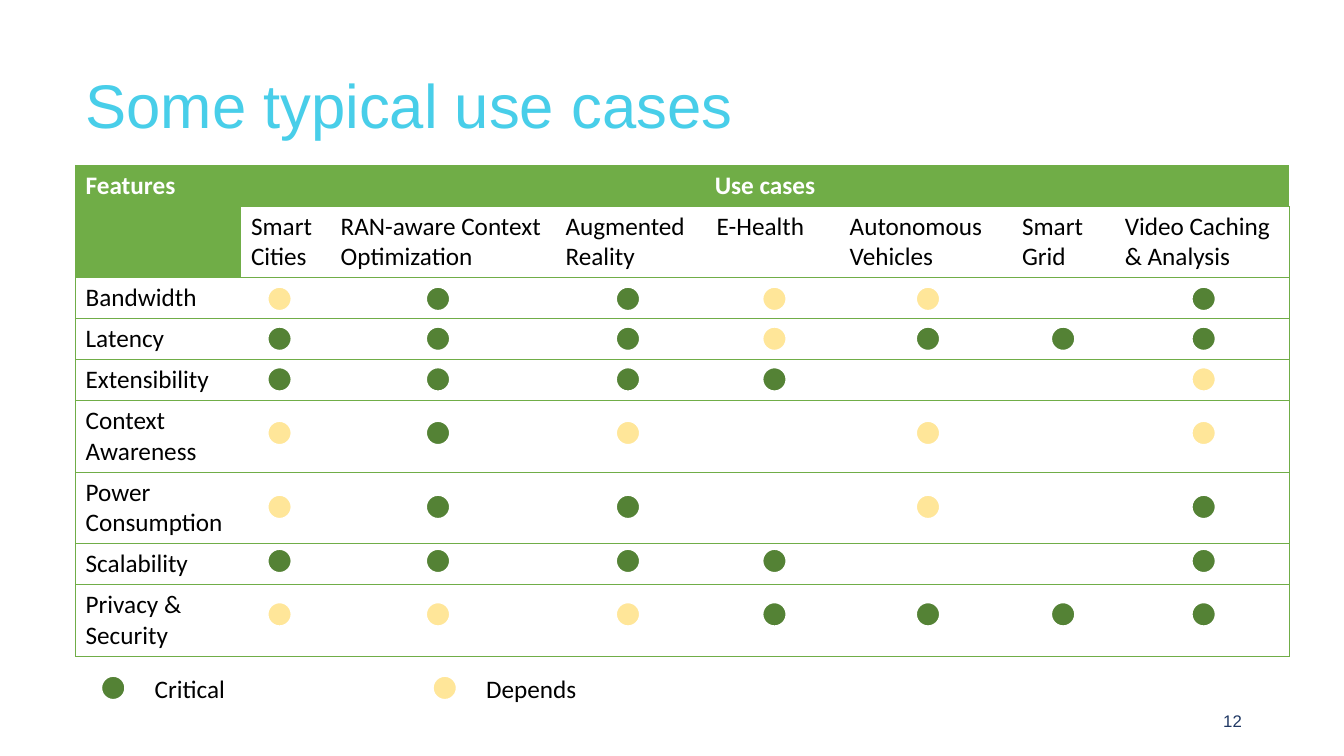
from lxml import etree
from pptx import Presentation
from pptx.dml.color import RGBColor
from pptx.enum import shapes, text
from pptx.oxml.ns import qn
from pptx.util import Pt

HUES = {
    "title": "48CEE9", "head": "70AD47", "white": "FFFFFF", "black": "000000",
    "page": "203864", "C": "548235", "D": "FFE699",
}
CASES = ["Smart Cities", "RAN-aware Context Optimization", "Augmented Reality",
         "E-Health", "Autonomous Vehicles", "Smart Grid",
         "Video Caching & Analysis"]
# One letter per use case: C critical, D depends, - none
MARKS = {
    "Bandwidth": "DCCDD-C",
    "Latency": "CCCDCCC",
    "Extensibility": "CCCC--D",
    "Context Awareness": "DCD-D-D",
    "Power Consumption": "DCC-D-C",
    "Scalability": "CCCC--C",
    "Privacy & Security": "DDDCCCC",
}
LEFT, TOP = 54, 118
WIDTHS = [118.1, 64.1, 160.6, 108, 95, 123.1, 73.4, 124.6]
LOW, TALL = 29.2, 51.2
HEIGHTS = [LOW, TALL, LOW, LOW, LOW, TALL, TALL, LOW, TALL]
DOT = 17.3
DOT_X = [199.7, 312.9, 448.6, 553.2, 662.9, 759.4, 859.8]
DOT_Y = [213.5, 242, 271, 309.3, 362.1, 400.7, 438.8]


def hue(name):
    return RGBColor.from_string(HUES[name])


def write(frame, words, size=18, font="Calibri", color="black", bold=False,
          align=text.PP_ALIGN.LEFT, space=None):
    frame.word_wrap = True
    para = frame.paragraphs[0]
    para.alignment = align
    para.line_spacing = space
    run = para.add_run()
    run.text = words
    run.font.size = Pt(size)
    run.font.name = font
    run.font.bold = bold
    run.font.color.rgb = hue(color)


def add_label(slide, words, x, y, w, h, anchor=text.MSO_ANCHOR.TOP, **style):
    frame = slide.shapes.add_textbox(Pt(x), Pt(y), Pt(w), Pt(h)).text_frame
    frame.vertical_anchor = anchor
    write(frame, words, **style)


def add_dot(slide, x, y, mark):
    """Place a round mark with its centre at x, y."""
    dot = slide.shapes.add_shape(shapes.MSO_SHAPE.OVAL, Pt(x - DOT / 2),
                                 Pt(y - DOT / 2), Pt(DOT), Pt(DOT))
    dot.shadow.inherit = False
    dot.fill.solid()
    dot.fill.fore_color.rgb = hue(mark)
    dot.line.color.rgb = hue("white")
    dot.line.width = Pt(1.5)


def set_edges(cell, drawn):
    """Rule the sides named in drawn and clear the others."""
    props = cell._tc.get_or_add_tcPr()
    for side in "LRTB":
        line = etree.SubElement(props, qn(f"a:ln{side}"), w=str(Pt(0.5)))
        if side in drawn:
            fill = etree.SubElement(line, qn("a:solidFill"))
            etree.SubElement(fill, qn("a:srgbClr"), val=HUES["head"])
        else:
            etree.SubElement(line, qn("a:noFill"))


def add_grid(slide):
    rows, cols = len(HEIGHTS), len(WIDTHS)
    table = slide.shapes.add_table(rows, cols, Pt(LEFT), Pt(TOP),
                                   Pt(sum(WIDTHS)), Pt(sum(HEIGHTS))).table
    table.first_row = table.horz_banding = False
    for col, width in zip(table.columns, WIDTHS):
        col.width = Pt(width)
    for row, height in zip(table.rows, HEIGHTS):
        row.height = Pt(height)
    for r in range(rows):
        for c in range(cols):
            cell = table.cell(r, c)
            set_edges(cell, "TB" + "L" * (c == 0) + "R" * (c == cols - 1))
            if r == 0 or (r == 1 and c == 0):
                cell.fill.solid()
                cell.fill.fore_color.rgb = hue("head")
            else:
                cell.fill.background()
    table.cell(0, 0).merge(table.cell(1, 0))
    table.cell(0, 1).merge(table.cell(0, cols - 1))
    write(table.cell(0, 0).text_frame, "Features", color="white", bold=True)
    write(table.cell(0, 1).text_frame, "Use cases", color="white", bold=True,
          align=text.PP_ALIGN.CENTER)
    for c, case in enumerate(CASES, 1):
        write(table.cell(1, c).text_frame, case)
    for r, trait in enumerate(MARKS, 2):
        write(table.cell(r, 0).text_frame, trait)


def main():
    deck = Presentation()
    deck.slide_width, deck.slide_height = Pt(960), Pt(540)
    slide = deck.slides.add_slide(deck.slide_layouts[6])
    middle = text.MSO_ANCHOR.MIDDLE
    add_label(slide, "Some typical use cases", LEFT, 25.2, 828, 104.4, middle,
              size=44, font="Arial", color="title", space=0.9)
    add_grid(slide)
    add_label(slide, "12", 678.2, 500.4, 216, 28.8, middle, size=12,
              font="Arial", color="page", align=text.PP_ALIGN.RIGHT)
    for y, marks in zip(DOT_Y, MARKS.values()):
        for x, mark in zip(DOT_X, marks):
            if mark != "-":
                add_dot(slide, x, y, mark)
    for x, mark, words in [(80.9, "C", "Critical"), (317.7, "D", "Depends")]:
        add_dot(slide, x, 491.4, mark)
        add_label(slide, words, x + 22.5, 477.4, 147.6, 29)
    deck.save("out.pptx")


if __name__ == "__main__":
    main()
